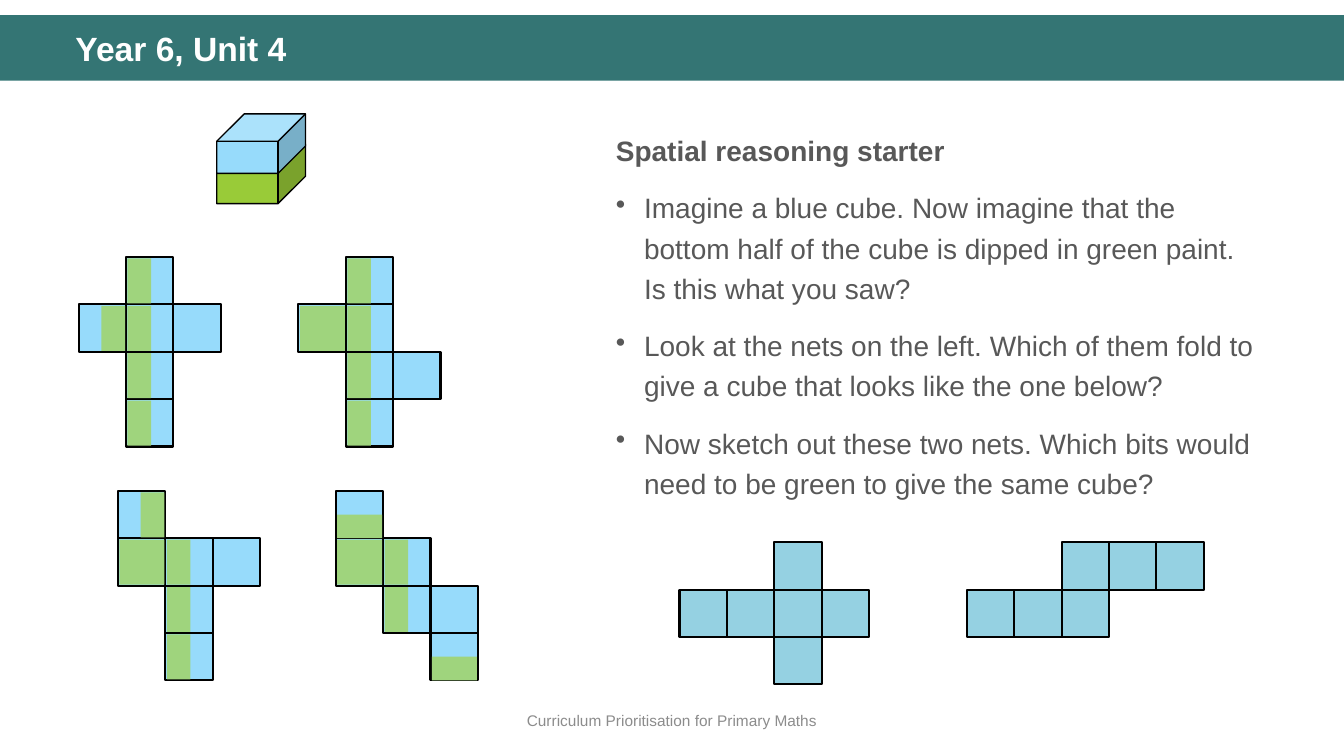
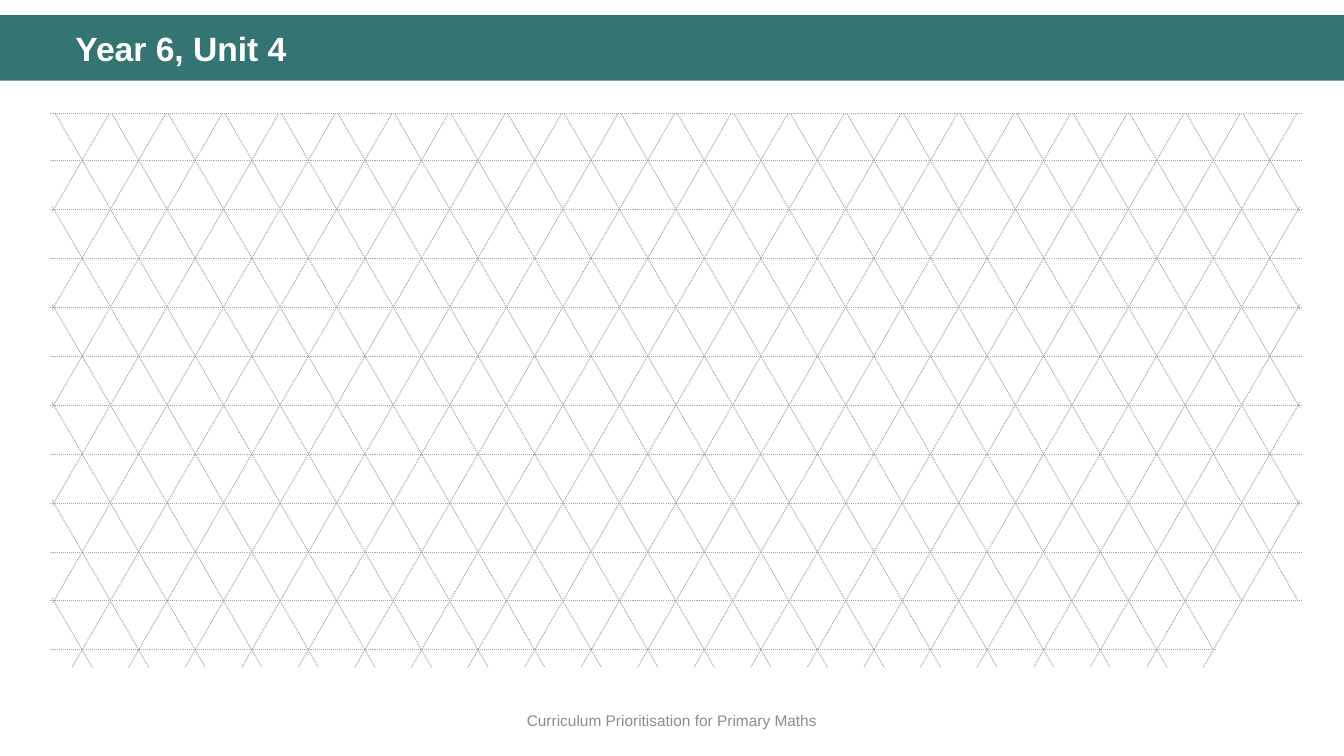
from dataclasses import dataclass
from math import sqrt

from lxml import etree
from pptx import Presentation
from pptx.dml.color import RGBColor
from pptx.enum.dml import MSO_LINE
from pptx.enum.shapes import MSO_CONNECTOR, MSO_SHAPE
from pptx.enum.text import MSO_ANCHOR, PP_ALIGN
from pptx.oxml.ns import qn
from pptx.shapes.autoshape import Shape
from pptx.shapes.shapetree import GroupShapes
from pptx.slide import Slide
from pptx.text.text import TextFrame, _Paragraph as Paragraph
from pptx.util import Inches, Pt

RECTANGLE, CUBE = MSO_SHAPE.RECTANGLE, MSO_SHAPE.CUBE
STRAIGHT = MSO_CONNECTOR.STRAIGHT
DOTTED = MSO_LINE.ROUND_DOT
CENTER, LEFT = PP_ALIGN.CENTER, PP_ALIGN.LEFT
TOP, MIDDLE = MSO_ANCHOR.TOP, MSO_ANCHOR.MIDDLE

SLIDE_WIDTH, SLIDE_HEIGHT = 13.33, 7.5
FONT = "Arial"
TEAL, WHITE, BLACK = "347574", "FFFFFF", "000000"
BODY_GREY, FOOTER_GREY, LINE_GREY = "585858", "8C8C8C", "A6A6A6"
SKY, POOL, LEAF, LIME = "97DBFB", "95D1E2", "9FD47D", "99CB38"

TITLE = "Year 6, Unit 4"
FOOTER = "Curriculum Prioritisation for Primary Maths"
HEADING = "Spatial reasoning starter"
QUESTIONS = [
    "Imagine a blue cube. Now imagine that the bottom half of the cube is "
    "dipped in green paint. Is this what you saw?",
    "Look at the nets on the left. Which of them fold to give a cube that "
    "looks like the one below?",
    "Now sketch out these two nets. Which bits would need to be green to "
    "give the same cube?",
]

SQUARE = 0.47
# Painted part of a square, as shares of its side: left, top, width, height
PAINT = {
    "L": (0.03, 0.03, 0.5, 0.95),
    "R": (0.48, 0.03, 0.5, 0.95),
    "D": (0.03, 0.5, 0.95, 0.5),
    "F": (0.03, 0.03, 0.95, 0.95),
}


@dataclass(frozen=True)
class Box:
    left: float
    top: float
    width: float
    height: float

    def emu(self) -> tuple[int, int, int, int]:
        return (Inches(self.left), Inches(self.top),
                Inches(self.width), Inches(self.height))


@dataclass(frozen=True)
class Net:
    """Rows of squares: a dot is a gap, B is plain, other letters are in PAINT."""
    left: float
    top: float
    rows: tuple[str, ...]
    colour: str = SKY


NETS = [
    Net(0.78, 2.55, (".L.", "RLB", ".L.", ".L.")),
    Net(2.96, 2.55, (".L.", "FL.", ".LB", ".L.")),
    Net(1.17, 4.87, ("R..", "FLB", ".L.", ".L.")),
    Net(3.33, 4.87, ("D..", "FL.", ".LB", "..D")),
    Net(6.74, 5.38, ("..B.", "BBBB", "..B."), POOL),
    Net(9.59, 5.38, ("..BBB", "BBB.."), POOL),
]


def rgb(colour: str) -> RGBColor:
    return RGBColor.from_string(colour)


def add_block(shapes: GroupShapes, kind: MSO_SHAPE, box: Box, fill: str,
              line_width: float = 0) -> Shape:
    shape = shapes.add_shape(kind, *box.emu())
    shape.shadow.inherit = False
    shape.fill.solid()
    shape.fill.fore_color.rgb = rgb(fill)
    if line_width:
        shape.line.color.rgb = rgb(BLACK)
        shape.line.width = Pt(line_width)
    else:
        shape.line.fill.background()
    return shape


def add_text_frame(slide: Slide, box: Box, anchor: MSO_ANCHOR = TOP) -> TextFrame:
    text_frame = slide.shapes.add_textbox(*box.emu()).text_frame
    text_frame.word_wrap = True
    text_frame.vertical_anchor = anchor
    return text_frame


def format_paragraph(paragraph: Paragraph, size: float, colour: str,
                     bold: bool = False, align: PP_ALIGN = LEFT) -> None:
    paragraph.alignment = align
    for run in paragraph.runs:
        run.font.name = FONT
        run.font.size = Pt(size)
        run.font.bold = bold
        run.font.color.rgb = rgb(colour)


def add_bullet(paragraph: Paragraph, colour: str, indent: float = 0.28) -> None:
    properties = paragraph._p.get_or_add_pPr()
    properties.set("marL", str(Inches(indent)))
    properties.set("indent", str(-Inches(indent)))
    bullet_colour = etree.SubElement(properties, qn("a:buClr"))
    etree.SubElement(bullet_colour, qn("a:srgbClr"), val=colour)
    etree.SubElement(properties, qn("a:buChar"), char="•")


def add_frame_slide(presentation: Presentation) -> Slide:
    """Add a blank slide with the title band and the footer."""
    slide = presentation.slides.add_slide(presentation.slide_layouts[6])
    add_block(slide.shapes, RECTANGLE, Box(0, 0.15, SLIDE_WIDTH, 0.65), TEAL)
    title = add_text_frame(slide, Box(0.65, 0.27, 12.18, 0.47))
    title.text = TITLE
    title.paragraphs[0].line_spacing = 0.9
    format_paragraph(title.paragraphs[0], 24, WHITE, bold=True)
    footer = add_text_frame(slide, Box(0, 6.95, SLIDE_WIDTH, 0.4), MIDDLE)
    footer.text = FOOTER
    format_paragraph(footer.paragraphs[0], 11, FOOTER_GREY, align=CENTER)
    return slide


def add_questions(slide: Slide) -> None:
    text_frame = add_text_frame(slide, Box(6.01, 1.21, 6.6, 2.69))
    text_frame.text = "\n".join([HEADING, *QUESTIONS])
    for index, paragraph in enumerate(text_frame.paragraphs):
        paragraph.line_spacing = 1.2
        paragraph.space_before = Pt(6 if index else 0)
        paragraph.space_after = Pt(6)
        if index:
            add_bullet(paragraph, BODY_GREY)
        format_paragraph(paragraph, 20, BODY_GREY, bold=index == 0)


def add_dipped_cube(slide: Slide) -> None:
    shapes = slide.shapes.add_group_shape().shapes
    for top, colour in ((1.43, LIME), (1.13, SKY)):
        half = add_block(shapes, CUBE, Box(2.15, top, 0.88, 0.59), colour, 1)
        half.adjustments[0] = 0.46


def add_net(slide: Slide, net: Net) -> None:
    shapes = slide.shapes.add_group_shape().shapes
    squares = [(letter, net.left + column * SQUARE, net.top + row * SQUARE)
               for row, letters in enumerate(net.rows)
               for column, letter in enumerate(letters) if letter != "."]
    for _, left, top in squares:
        add_block(shapes, RECTANGLE, Box(left, top, SQUARE, SQUARE), net.colour, 1.5)
    for letter, left, top in squares:
        if letter in PAINT:
            x, y, width, height = (share * SQUARE for share in PAINT[letter])
            add_block(shapes, RECTANGLE, Box(left + x, top + y, width, height), LEAF)


def add_dotted_line(shapes: GroupShapes, x1: float, y1: float,
                    x2: float, y2: float) -> None:
    line = shapes.add_connector(STRAIGHT, Inches(x1), Inches(y1),
                                Inches(x2), Inches(y2))
    line.line.color.rgb = rgb(LINE_GREY)
    line.line.width = Pt(0.75)
    line.line.dash_style = DOTTED
    etree.SubElement(line._element.spPr, qn("a:effectLst"))


def add_triangle_grid(slide: Slide) -> None:
    """Draw a lattice of equilateral triangles with its bottom right corner cut."""
    shapes = slide.shapes.add_group_shape().shapes
    top, bottom, left, right = 1.13, 6.62, 0.52, 12.89
    first_falling, first_rising = 0.55, 1.08
    spacing = (12.33 - first_falling) / 21
    row_height = spacing * sqrt(3) / 2
    first_row, last_row = 1.59, 10
    cut_top = first_row + (last_row - 1) * row_height
    cut_edge = first_rising + 25 * spacing

    for index in range(-5, 22):
        x = first_falling + index * spacing
        start = top + max(0, left - x) * sqrt(3)
        meeting = top + (cut_edge - x) / 2 * sqrt(3)
        end = min(bottom, top + (right - x) * sqrt(3), max(cut_top, meeting))
        add_dotted_line(shapes, x + (start - top) / sqrt(3), start,
                        x + (end - top) / sqrt(3), end)
    for index in range(26):
        x = first_rising + index * spacing
        start = top + max(0, x - right) * sqrt(3)
        end = min(bottom, top + (x - left) * sqrt(3))
        add_dotted_line(shapes, x - (start - top) / sqrt(3), start,
                        x - (end - top) / sqrt(3), end)

    add_dotted_line(shapes, 0.5, top, 12.92, top)
    for row in range(last_row + 1):
        y = first_row + row * row_height
        add_dotted_line(shapes, 0.5, y, 12.05 if row == last_row else 12.92, y)


def main() -> None:
    presentation = Presentation()
    presentation.slide_width = Inches(SLIDE_WIDTH)
    presentation.slide_height = Inches(SLIDE_HEIGHT)
    starter = add_frame_slide(presentation)
    add_questions(starter)
    add_dipped_cube(starter)
    for net in NETS:
        add_net(starter, net)
    add_triangle_grid(add_frame_slide(presentation))
    presentation.save("out.pptx")


if __name__ == "__main__":
    main()
